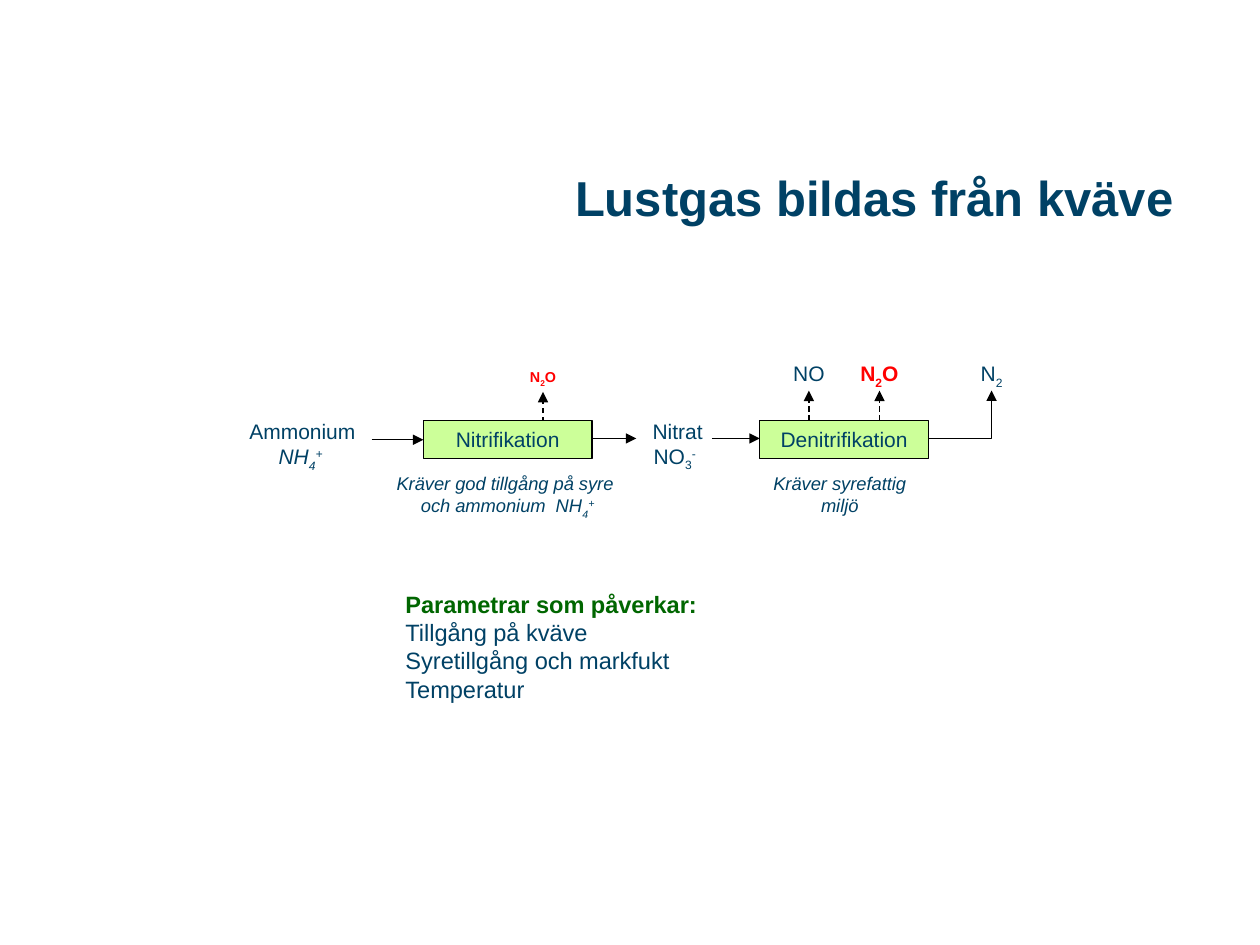
from dataclasses import dataclass

from lxml import etree
from pptx import Presentation
from pptx.dml.color import RGBColor
from pptx.enum.dml import MSO_LINE
from pptx.enum.shapes import MSO_CONNECTOR, MSO_SHAPE
from pptx.enum.text import MSO_ANCHOR, PP_ALIGN
from pptx.oxml.ns import qn
from pptx.util import Inches, Pt

LEFT, CENTER, RIGHT = PP_ALIGN.LEFT, PP_ALIGN.CENTER, PP_ALIGN.RIGHT
TOP, MIDDLE = MSO_ANCHOR.TOP, MSO_ANCHOR.MIDDLE
STRAIGHT, ELBOW = MSO_CONNECTOR.STRAIGHT, MSO_CONNECTOR.ELBOW
RECT = MSO_SHAPE.RECTANGLE
DASH = MSO_LINE.DASH


@dataclass(frozen=True)
class Theme:
    font: str = "Arial"
    ink: str = "004165"
    red: str = "FF0000"
    green: str = "006600"
    box: str = "CCFF99"
    paper: str = "FFFFFF"
    line: str = "000000"
    line_width: float = 0.75
    title: float = 28
    list: float = 13.5
    label: float = 12
    caption: float = 10.5
    small: float = 8.2


T = Theme()
LABEL_INSET = 0.04
SUB, SUP = -30, 30
N2O = [[("N", 0), ("2", SUB), ("O", 0)]]


def rgb(value):
    return RGBColor.from_string(value)


def write(sp, paragraphs, size, align=CENTER, anchor=TOP, inset=0.1, **style):
    """Fill a shape; a run is (text, baseline shift in percent, own font values)."""
    tf = sp.text_frame
    frame = dict(word_wrap=True, vertical_anchor=anchor,
                 margin_left=Inches(inset), margin_right=Inches(inset),
                 margin_top=Inches(0.05), margin_bottom=Inches(0.05))
    for name, value in frame.items():
        setattr(tf, name, value)
    for i, runs in enumerate(paragraphs):
        p = tf.paragraphs[0] if i == 0 else tf.add_paragraph()
        p.alignment = align
        for text, shift, *own in runs:
            r = p.add_run()
            r.text = text
            values = dict(name=T.font, size=Pt(size), color=T.ink) | style
            for extra in own:
                values |= extra
            r.font.color.rgb = rgb(values.pop("color"))
            for name, value in values.items():
                setattr(r.font, name, value)
            if shift:
                r._r.get_or_add_rPr().set("baseline", str(shift * 1000))


def add_text(s, at, paragraphs, size, **style):
    write(s.shapes.add_textbox(*map(Inches, at)), paragraphs, size, **style)


def add_label(s, at, paragraphs, size=T.label, **style):
    add_text(s, at, paragraphs, size, inset=LABEL_INSET, **style)


def add_box(s, at, paragraphs, size, fill, outlined=True, **style):
    sp = s.shapes.add_shape(RECT, *map(Inches, at))
    sp.shadow.inherit = False
    sp.fill.solid()
    sp.fill.fore_color.rgb = rgb(fill)
    if outlined:
        sp.line.color.rgb = rgb(T.line)
        sp.line.width = Pt(T.line_width)
    else:
        sp.line.fill.background()
    write(sp, paragraphs, size, **style)


def add_arrow(s, start, end, dashed=False, kind=STRAIGHT):
    cxn = s.shapes.add_connector(kind, *map(Inches, (*start, *end)))
    cxn.line.color.rgb = rgb(T.line)
    cxn.line.width = Pt(T.line_width)
    if dashed:
        cxn.line.dash_style = DASH
    spPr = cxn._element.spPr
    if kind == ELBOW:  # a single corner
        spPr.find(qn("a:prstGeom")).set("prst", "bentConnector2")
    etree.SubElement(spPr.find(qn("a:ln")), qn("a:tailEnd"), type="triangle")
    etree.SubElement(spPr, qn("a:effectLst"))


def add_substances(s):
    add_label(s, (1.84, 3.27, 1.12, 0.51),
              [[("Ammonium ", 0)] + [(text, shift, {"italic": True}) for text, shift
                                     in (("NH", 0), ("4", SUB), ("+ ", SUP))]])
    add_label(s, (5, 3.27, 0.71, 0.51),
              [[(" Nitrat", 0)], [("NO", 0), ("3", -25), ("-", SUP)]])


def add_gases(s):
    add_label(s, (7.64, 2.81, 0.46, 0.3), [[("N", 0), ("2", SUB)]])
    add_label(s, (4.06, 2.87, 0.5, 0.24), N2O, T.small, color=T.red, bold=True)
    add_label(s, (6.17, 2.81, 0.5, 0.3), [[("NO", 0)]])
    add_label(s, (6.73, 2.81, 0.5, 0.3), N2O, color=T.red, bold=True)


def add_flow(s):
    for x1, x2, y in ((2.95, 3.36, 3.49), (4.7, 5.05, 3.48), (5.65, 6.03, 3.48)):
        add_arrow(s, (x1, y), (x2, y))
    add_arrow(s, (7.37, 3.48), (7.87, 3.1), kind=ELBOW)
    for x, tip in ((4.31, 3.11), (6.42, 3.1), (6.98, 3.1)):
        add_arrow(s, (x, tip + 0.31), (x, tip), dashed=True)


def add_processes(s):
    for x, name in ((3.36, "Nitrifikation"), (6.03, "Denitrifikation")):
        add_box(s, (x, 3.34, 1.34, 0.3), [[(name, 0)]], T.label, T.box)
    needs = (
        (2.71, 2.64, [[("Kräver god tillgång på syre ", 0)],
                      [("och ammonium  NH", 0), ("4", SUB), ("+", SUP)]]),
        (5.87, 1.59, [[("Kräver syrefattig miljö", 0)]]),
    )
    for x, width, paragraphs in needs:
        add_box(s, (x, 3.7, width, 0.45), paragraphs, T.caption, T.paper,
                outlined=False, italic=True)


def add_parameters(s):
    heading = ("Parametrar som påverkar:", 0, {"color": T.green, "bold": True})
    items = ("Tillgång på kväve", "Syretillgång och markfukt", "Temperatur")
    add_text(s, (3.12, 4.63, 5.16, 1.24),
             [[heading]] + [[(item, 0)] for item in items], T.list, align=LEFT)


def main():
    prs = Presentation()
    prs.slide_width, prs.slide_height = Inches(10), Inches(7.5)
    s = prs.slides.add_slide(prs.slide_layouts[6])
    add_text(s, (0.59, 1.27, 8.82, 0.59), [[("Lustgas bildas från kväve", 0)]],
             T.title, align=RIGHT, anchor=MIDDLE, bold=True)
    add_substances(s)
    add_gases(s)
    add_flow(s)
    add_processes(s)
    add_parameters(s)
    prs.save("out.pptx")


if __name__ == "__main__":
    main()
